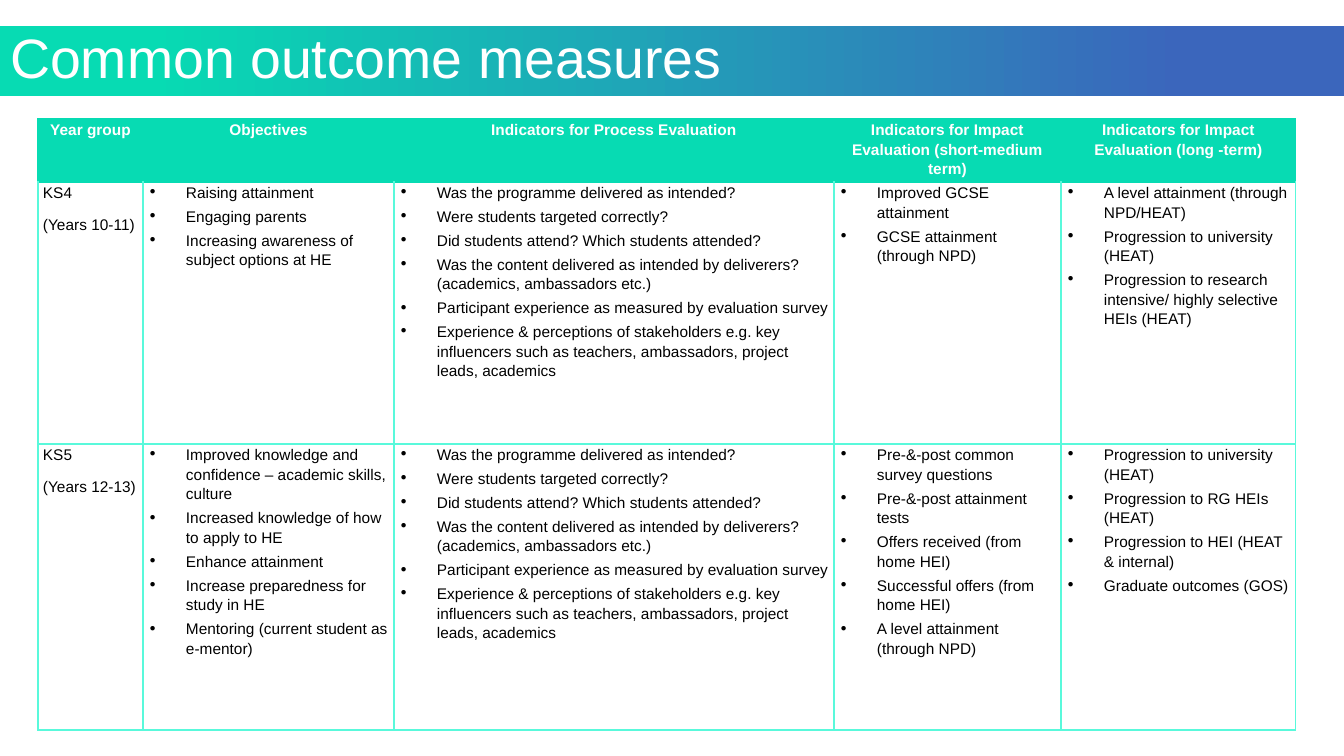
from lxml.etree import SubElement
from pptx import Presentation
from pptx.dml.color import RGBColor
from pptx.enum.shapes import MSO_SHAPE as Preset
from pptx.enum.text import MSO_ANCHOR as Anchor, PP_ALIGN as Align
from pptx.oxml.ns import qn
from pptx.util import Pt

SCALE = 12192000 / 1344
COLORS = {"teal": "07DBB3", "blue": "3B66BC", "mint": "59F9DB",
          "white": "FFFFFF", "black": "000000"}
FONT = "Arial"

COLUMN_WIDTHS = [105, 251, 440, 227, 235]
ROW_HEIGHTS = [63, 262, 286]
HEADERS = ["Year group", "Objectives", "Indicators for Process Evaluation",
           "Indicators for Impact Evaluation (short-medium term)",
           "Indicators for Impact Evaluation (long -term)"]
PROCESS = ["Was the programme delivered as intended?",
           "Were students targeted correctly?",
           "Did students attend? Which students attended?",
           "Was the content delivered as intended by deliverers? (academics, ambassadors etc.)",
           "Participant experience as measured by evaluation survey",
           "Experience & perceptions of stakeholders e.g. key influencers such as teachers, "
           "ambassadors, project leads, academics"]
STAGES = [
    [["KS4", "(Years 10-11)"],
     ["Raising attainment", "Engaging parents",
      "Increasing awareness of subject options at HE"],
     PROCESS,
     ["Improved GCSE attainment", "GCSE attainment (through NPD)"],
     ["A level attainment (through NPD/HEAT)", "Progression to university (HEAT)",
      "Progression to research intensive/ highly selective HEIs (HEAT)"]],
    [["KS5", "(Years 12-13)"],
     ["Improved knowledge and confidence – academic skills, culture",
      "Increased knowledge of how to apply to HE", "Enhance attainment",
      "Increase preparedness for study in HE",
      "Mentoring (current student as e-mentor)"],
     PROCESS,
     ["Pre-&-post common survey questions", "Pre-&-post attainment tests",
      "Offers received (from home HEI)", "Successful offers (from home HEI)",
      "A level attainment (through NPD)"],
     ["Progression to university (HEAT)", "Progression to RG HEIs (HEAT)",
      "Progression to HEI (HEAT & internal)", "Graduate outcomes (GOS)"]],
]


def px(length):
    return round(length * SCALE)


def add_run(paragraph, text, size, color, bold=False):
    run = paragraph.add_run()
    run.text = text
    run.font.name = FONT
    run.font.size = Pt(size)
    run.font.bold = bold
    run.font.color.rgb = RGBColor.from_string(COLORS[color])


def add_color(parent, color):
    SubElement(parent, qn("a:srgbClr"), val=COLORS[color])


def add_bullet(paragraph):
    properties = paragraph._p.get_or_add_pPr()
    properties.set("marL", str(px(38)))
    properties.set("indent", str(-px(38)))
    add_color(SubElement(properties, qn("a:buClr")), "black")
    SubElement(properties, qn("a:buChar"), char="∙")


def set_borders(cell, **sides):
    properties = cell._tc.get_or_add_tcPr()
    for side in "LRTB":
        line = SubElement(properties, qn(f"a:ln{side}"), w=str(Pt(1)))
        add_color(SubElement(line, qn("a:solidFill")), sides.get(side, "mint"))


def fill_cell(cell, texts, header=False, bulleted=False):
    cell.margin_left = cell.margin_right = px(5)
    cell.margin_top = cell.margin_bottom = 0
    cell.vertical_anchor = Anchor.TOP
    for index, text in enumerate(texts):
        frame = cell.text_frame
        paragraph = frame.add_paragraph() if index else frame.paragraphs[0]
        paragraph.line_spacing = 1.15
        paragraph.alignment = Align.CENTER if header else Align.LEFT
        if index:
            paragraph.space_before = Pt(3 if bulleted else 9)
        if bulleted:
            add_bullet(paragraph)
        add_run(paragraph, text, 11, "white" if header else "black", header)


def add_title_band(slide, left, top, width, height):
    band = slide.shapes.add_shape(Preset.RECTANGLE, px(left), px(top), px(width), px(height))
    band.shadow.inherit = False
    band.line.fill.background()
    # Four-stop gradient, teal at the left
    band.fill.gradient()
    band.fill.gradient_angle = 180
    stops = next(band._element.spPr.iter(qn("a:gsLst")))
    for stop in list(stops):
        stops.remove(stop)
    for position, color in [(0, "blue"), (12, "blue"), (89, "teal"), (100, "teal")]:
        add_color(SubElement(stops, qn("a:gs"), pos=str(position * 1000)), color)
    # Title text
    frame = band.text_frame
    frame.word_wrap = True
    frame.vertical_anchor = Anchor.MIDDLE
    frame.margin_left = frame.margin_right = px(10)
    frame.margin_top = frame.margin_bottom = px(5)
    paragraph = frame.paragraphs[0]
    paragraph.alignment = Align.LEFT
    paragraph.line_spacing = 0.9
    add_run(paragraph, "Common outcome measures", 39.6, "white")


def add_outcome_table(slide, left, top):
    table = slide.shapes.add_table(
        len(ROW_HEIGHTS), len(COLUMN_WIDTHS), px(left), px(top),
        px(sum(COLUMN_WIDTHS)), px(sum(ROW_HEIGHTS))).table
    table.horz_banding = False
    for column, width in zip(table.columns, COLUMN_WIDTHS):
        column.width = px(width)
    for row, height in zip(table.rows, ROW_HEIGHTS):
        row.height = px(height)
    # Header row
    for column, text in enumerate(HEADERS):
        cell = table.cell(0, column)
        fill_cell(cell, [text], header=True)
        set_borders(cell, L="teal", R="teal", T="teal", B="teal")
        cell.fill.solid()
        cell.fill.fore_color.rgb = RGBColor.from_string(COLORS["teal"])
    # One row for each key stage
    for row, stage in enumerate(STAGES, 1):
        for column, texts in enumerate(stage):
            cell = table.cell(row, column)
            fill_cell(cell, texts, bulleted=column > 0)
            set_borders(cell, T="teal" if row == 1 else "mint")
            cell.fill.background()


def main():
    presentation = Presentation()
    presentation.slide_width = px(1344)
    presentation.slide_height = px(756)
    slide = presentation.slides.add_slide(presentation.slide_layouts[6])
    add_title_band(slide, 0, 26, 1344, 70)
    add_outcome_table(slide, 38, 119)
    presentation.save("out.pptx")


if __name__ == "__main__":
    main()
